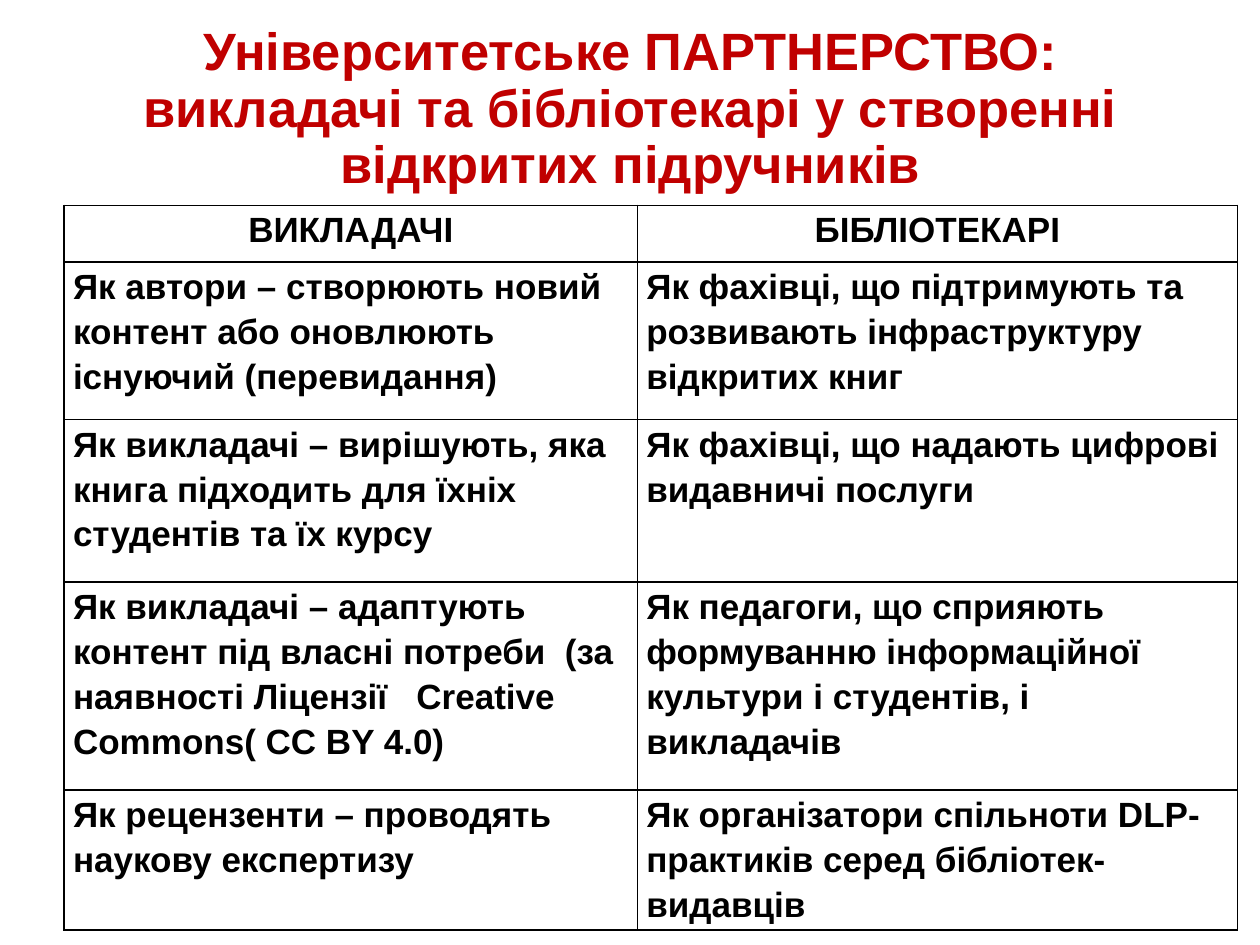
from lxml.etree import SubElement
from pptx import Presentation
from pptx.dml.color import RGBColor
from pptx.enum.text import MSO_ANCHOR, MSO_AUTO_SIZE, PP_ALIGN
from pptx.oxml.ns import qn
from pptx.util import Inches, Pt

FONT = "Arial"
RED = RGBColor(0xC0, 0x00, 0x00)
BLACK = RGBColor(0x00, 0x00, 0x00)

TITLE_LINES = (
    "Університетське ПАРТНЕРСТВО:",
    "викладачі та бібліотекарі у створенні відкритих підручників",
)
ROLES = (
    ("ВИКЛАДАЧІ", "БІБЛІОТЕКАРІ"),
    ("Як автори – створюють новий контент або оновлюють існуючий (перевидання)",
     "Як фахівці, що підтримують та розвивають інфраструктуру відкритих книг"),
    ("Як викладачі – вирішують, яка книга підходить для їхніх студентів та їх курсу",
     "Як фахівці, що надають цифрові видавничі послуги"),
    ("Як викладачі – адаптують контент під власні потреби  (за наявності Ліцензії   "
     "Creative Commons( CC BY 4.0)",
     "Як педагоги, що сприяють формуванню інформаційної культури і студентів, і викладачів"),
    ("Як рецензенти – проводять наукову експертизу",
     "Як організатори спільноти DLP- практиків серед бібліотек-видавців"),
)
COLUMN_WIDTHS = (4.55, 4.76)
ROW_HEIGHTS = (0.45, 1.25, 1.29, 1.65, 1.11)


def add_span(paragraph, text, size, color):
    """Add one bold run to a paragraph."""
    span = paragraph.add_run()
    span.text = text
    span.font.name = FONT
    span.font.size = Pt(size)
    span.font.bold = True
    span.font.color.rgb = color


def add_borders(cell):
    """Draw a thin black line on all four sides of a cell."""
    properties = cell._tc.get_or_add_tcPr()
    for side in ("a:lnL", "a:lnR", "a:lnT", "a:lnB"):
        line = SubElement(properties, qn(side), w=str(Pt(1)))
        fill = SubElement(line, qn("a:solidFill"))
        SubElement(fill, qn("a:srgbClr"), val=str(BLACK))


def fill_title(page, left, top, width, height):
    """Place the slide title in the given box."""
    title = page.shapes.title
    title.left, title.top, title.width, title.height = left, top, width, height
    frame = title.text_frame
    frame.word_wrap = True
    frame.auto_size = MSO_AUTO_SIZE.NONE
    frame.vertical_anchor = MSO_ANCHOR.MIDDLE
    paragraph = frame.paragraphs[0]
    paragraph.alignment = PP_ALIGN.CENTER
    paragraph.line_spacing = 0.9
    for index, text in enumerate(TITLE_LINES):
        if index:
            paragraph.add_line_break()
        add_span(paragraph, text, 30, RED)


def fill_cell(cell, text, alignment):
    """Write and format one table cell."""
    cell.margin_left = cell.margin_right = Inches(0.07)
    cell.margin_top = cell.margin_bottom = 0
    cell.vertical_anchor = MSO_ANCHOR.TOP
    add_borders(cell)
    cell.fill.background()
    paragraph = cell.text_frame.paragraphs[0]
    paragraph.alignment = alignment
    paragraph.line_spacing = 1.15
    add_span(paragraph, text, 20, BLACK)


def add_roles_table(page, left, top, width, height):
    """Place the table of roles in the given box."""
    table = page.shapes.add_table(
        len(ROLES), len(COLUMN_WIDTHS), left, top, width, height).table
    table.horz_banding = False
    for column, column_width in zip(table.columns, COLUMN_WIDTHS):
        column.width = Inches(column_width)
    for index, (row, row_height) in enumerate(zip(table.rows, ROW_HEIGHTS)):
        row.height = Inches(row_height)
        alignment = PP_ALIGN.LEFT if index else PP_ALIGN.CENTER
        for cell, text in zip(row.cells, ROLES[index]):
            fill_cell(cell, text, alignment)


def main():
    """Build the slide and save the deck."""
    deck = Presentation()
    deck.slide_width, deck.slide_height = Inches(10), Inches(7.5)
    page = deck.slides.add_slide(deck.slide_layouts.get_by_name("Title Only"))
    fill_title(page, Inches(0.16), Inches(0.16), Inches(9.69), Inches(1.43))
    add_roles_table(page, Inches(0.51), Inches(1.63),
                    Inches(sum(COLUMN_WIDTHS)), Inches(sum(ROW_HEIGHTS)))
    deck.save("out.pptx")


if __name__ == "__main__":
    main()
